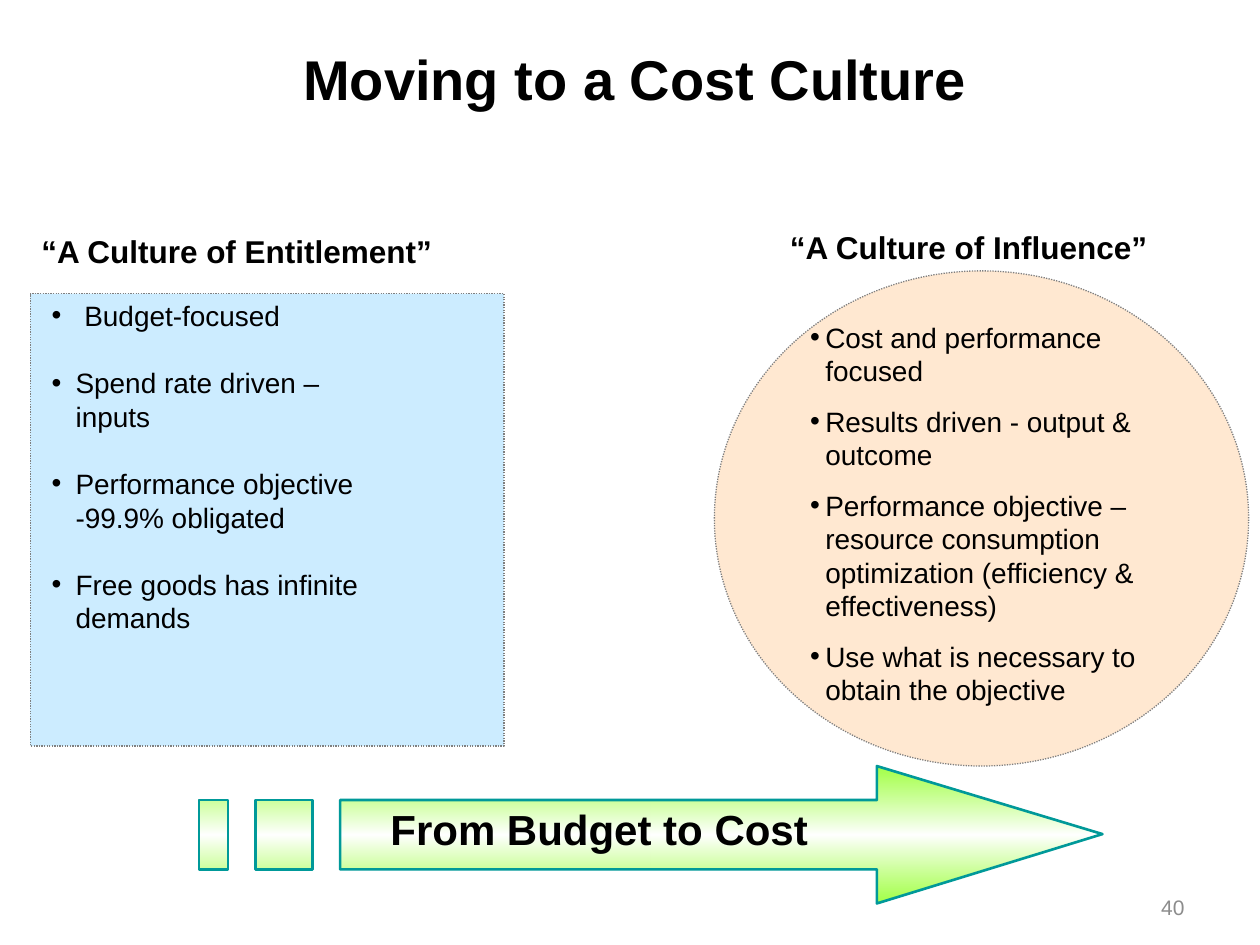
from pptx import Presentation
from pptx.dml.color import RGBColor
from pptx.enum.dml import MSO_LINE
from pptx.enum.shapes import MSO_SHAPE
from pptx.enum.text import MSO_ANCHOR, MSO_AUTO_SIZE, PP_ALIGN
from pptx.oxml import parse_xml
from pptx.oxml.ns import nsdecls, qn
from pptx.util import Inches, Pt

THEME = {
    "font": "Arial", "text": "000000", "muted": "8C8C8C",
    "edge": "808080", "sky": "CCECFF", "peach": "FFE8D1",
    "teal": "009999", "lime": "99FF33", "white": "FFFFFF",
    "title": 32, "banner": 24, "head": 18, "body": 16, "note": 12,
    "pitch": 19.2,
}

TITLE = ("Moving to a Cost Culture", (1.25, 0.3, 7.58, 1.03))
BANNER = ("From Budget to Cost", (3, 6.33, 3.81, 0.72))
NUMBER = ("40", (7.17, 7, 2.33, 0.4))

# Each item is its text and its hanging indent; gap is in lines.
SIDES = [
    {
        "head": "“A Culture of Entitlement”", "head_at": (0.23, 1.79, 3.31, 0.4),
        "form": MSO_SHAPE.RECTANGLE, "fill": "sky", "at": (0.24, 2.33, 3.76, 3.59),
        "list_at": (0.31, 2.32, 2.75, 3.34), "gap": 1,
        "items": [
            ("Budget-focused", 0.26),
            ("Spend rate driven – inputs", 0.19),
            ("Performance objective -99.9% obligated", 0.19),
            ("Free goods has infinite demands", 0.19),
        ],
    },
    {
        "head": "“A Culture of Influence”", "head_at": (6.17, 1.76, 3.05, 0.4),
        "form": MSO_SHAPE.OVAL, "fill": "peach", "at": (5.67, 2.15, 4.24, 3.93),
        "list_at": (6.33, 2.49, 3.05, 3.18), "gap": 0.5,
        "items": [
            ("Cost and performance focused", 0.12),
            ("Results driven - output & outcome", 0.12),
            ("Performance objective – resource consumption optimization "
             "(efficiency & effectiveness)", 0.12),
            ("Use what is necessary to obtain the objective", 0.12),
        ],
    },
]

TOP, LOW = 6.35, 6.9
BARS = [(1.58, 1.81), (2.03, 2.48)]
ARROW = [(6.96, 6.08), (6.96, TOP), (2.7, TOP), (2.7, LOW),
         (6.96, LOW), (6.96, 7.17), (8.75, 6.62)]


def color(key):
    return RGBColor.from_string(THEME[key])


def place(shape, at):
    shape.left, shape.top, shape.width, shape.height = map(Inches, at)


def write(par, text, size="body", ink="text", bold=False, align=PP_ALIGN.LEFT):
    par.alignment = align
    run = par.add_run()
    run.text = text
    font = run.font
    font.name, font.size, font.bold = THEME["font"], Pt(THEME[size]), bold
    font.color.rgb = color(ink)


def label(slide, text, at, wrap=False, anchor=MSO_ANCHOR.TOP, **style):
    frame = slide.shapes.add_textbox(*map(Inches, at)).text_frame
    frame.word_wrap, frame.vertical_anchor = wrap, anchor
    write(frame.paragraphs[0], text, **style)


def bullet(par, indent):
    props = par._p.get_or_add_pPr()
    props.set("marL", str(Inches(indent)))
    props.set("indent", str(-Inches(indent)))
    props.append(parse_xml(f'<a:buFont {nsdecls("a")} typeface="{THEME["font"]}"/>'))
    props.append(parse_xml(f'<a:buChar {nsdecls("a")} char="•"/>'))


def fill_list(holder, side):
    place(holder, side["list_at"])
    frame = holder.text_frame
    frame.auto_size = MSO_AUTO_SIZE.NONE
    for i, (text, indent) in enumerate(side["items"]):
        par = frame.add_paragraph() if i else frame.paragraphs[0]
        bullet(par, indent)
        par.line_spacing = Pt(THEME["pitch"])
        par.space_before = Pt(THEME["pitch"] * side["gap"] if i else 0)
        write(par, text)


def add_panel(slide, side):
    panel = slide.shapes.add_shape(side["form"], *map(Inches, side["at"]))
    panel.shadow.inherit = False
    panel.fill.solid()
    panel.fill.fore_color.rgb = color(side["fill"])
    panel.line.color.rgb = color("edge")
    panel.line.width = Pt(0.75)
    panel.line.dash_style = MSO_LINE.ROUND_DOT


def add_arrow(slide):
    """Draw the arrow and its trailing bars as one outline, so they share a gradient."""
    bars = [[(a, TOP), (a, LOW), (b, LOW), (b, TOP)] for a, b in BARS]
    paths = [[(Inches(x), Inches(y)) for x, y in path] for path in [ARROW, *bars]]
    pen = slide.shapes.build_freeform(*paths[0][0])
    for i, path in enumerate(paths):
        if i:
            pen.move_to(*path[0])
        pen.add_line_segments(path[1:], close=True)
    arrow = pen.convert_to_shape()
    arrow.shadow.inherit = False
    arrow.line.color.rgb = color("teal")
    arrow.line.width = Pt(1.5)
    stops = "".join(
        f'<a:gs pos="{pos}000"><a:srgbClr val="{THEME[key]}">'
        f'<a:alpha val="{alpha}000"/></a:srgbClr></a:gs>'
        for pos, key, alpha in [(0, "lime", 90), (50, "white", 100), (100, "lime", 90)])
    arrow._element.spPr.find(qn("a:custGeom")).addnext(parse_xml(
        f'<a:gradFill {nsdecls("a")}><a:gsLst>{stops}</a:gsLst>'
        '<a:lin ang="5400000" scaled="0"/></a:gradFill>'))


def main():
    deck = Presentation()
    deck.slide_width, deck.slide_height = Inches(10), Inches(7.5)
    slide = deck.slides.add_slide(deck.slide_layouts[3])
    title, *lists = slide.placeholders

    text, at = TITLE
    place(title, at)
    title.text_frame.vertical_anchor = MSO_ANCHOR.TOP
    title.text_frame.auto_size = MSO_AUTO_SIZE.NONE
    write(title.text_frame.paragraphs[0], text, size="title", bold=True,
          align=PP_ALIGN.CENTER)

    for side, holder in zip(SIDES, lists):
        add_panel(slide, side)
        fill_list(holder, side)
        slide.shapes._spTree.append(holder._element)  # bring in front of its panel
        label(slide, side["head"], side["head_at"], size="head", bold=True)

    add_arrow(slide)
    label(slide, *BANNER, size="banner", bold=True)
    label(slide, *NUMBER, wrap=True, anchor=MSO_ANCHOR.MIDDLE, size="note",
          ink="muted", align=PP_ALIGN.RIGHT)
    deck.save("out.pptx")


if __name__ == "__main__":
    main()
